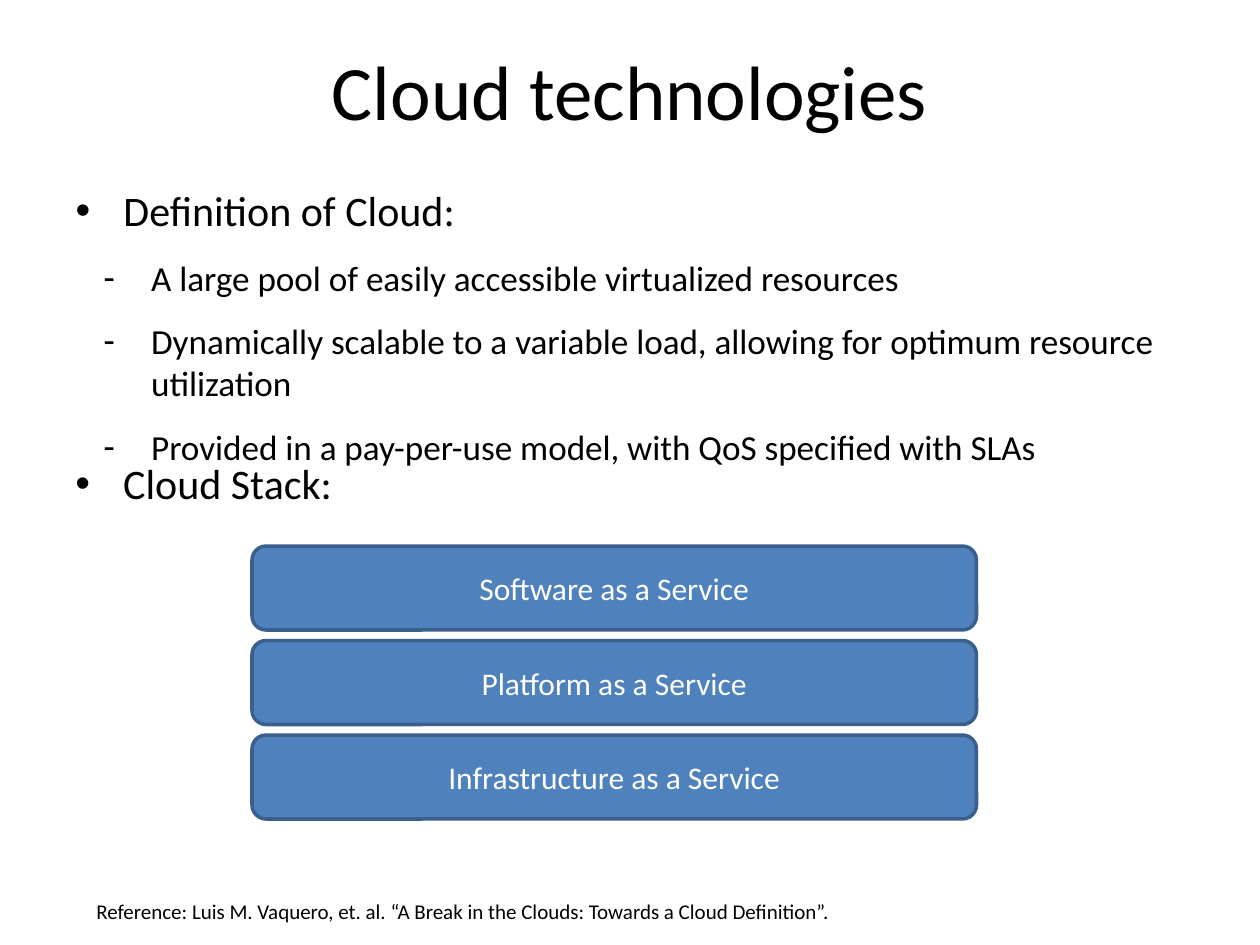
import dataclasses

import pptx
import pptx.dml.color
import pptx.enum.shapes
import pptx.enum.text
import pptx.oxml
import pptx.oxml.ns
import pptx.util

ALIGN = pptx.enum.text.PP_ALIGN
ANCHOR = pptx.enum.text.MSO_ANCHOR
FIT = pptx.enum.text.MSO_AUTO_SIZE
COLUMNS, ROWS = 120, 90


@dataclasses.dataclass(frozen=True)
class Theme:
    font: str = "Calibri"
    ink: str = "000000"
    paper: str = "FFFFFF"
    layer: str = "4F81BD"
    edge: str = "3A5F8C"
    title: float = 44
    topic: float = 24
    detail: float = 20.1
    label: float = 18
    note: float = 12


@dataclasses.dataclass(frozen=True)
class Box:
    """A region measured in columns and rows of the slide grid."""
    left: float
    top: float
    width: float
    height: float


THEME = Theme()
DEFINITION = [
    "A large pool of easily accessible virtualized resources",
    "Dynamically scalable to a variable load, allowing for optimum resource utilization",
    "Provided in a pay-per-use model, with QoS specified with SLAs",
]
STACK = ["Software as a Service", "Platform as a Service", "Infrastructure as a Service"]
REFERENCE = ("Reference: Luis M. Vaquero, et. al. "
             "“A Break in the Clouds: Towards a Cloud Definition”.")


def color(value):
    return pptx.dml.color.RGBColor.from_string(value)


def lengths(box):
    column = pptx.util.Inches(10) / COLUMNS
    row = pptx.util.Inches(7.5) / ROWS
    return [round(size) for size in (box.left * column, box.top * row,
                                     box.width * column, box.height * row)]


def place(shape, box):
    shape.left, shape.top, shape.width, shape.height = lengths(box)


def set_frame(shape, anchor=ANCHOR.TOP, fit=FIT.NONE):
    frame = shape.text_frame
    frame.word_wrap = True
    frame.auto_size = fit
    frame.vertical_anchor = anchor
    return frame


def set_bullet(para, mark, indent, hanging=0.38):
    props = para._p.get_or_add_pPr()
    props.set("marL", str(pptx.util.Inches(indent)))
    props.set("indent", str(-pptx.util.Inches(hanging)))
    space = pptx.oxml.ns.nsdecls("a")
    props.append(pptx.oxml.parse_xml(f'<a:buFont {space} typeface="Arial"/>'))
    props.append(pptx.oxml.parse_xml(f'<a:buChar {space} char="{mark}"/>'))


def write(frame, text, size, ink=THEME.ink, align=ALIGN.LEFT, space=0,
          mark=None, indent=0, level=0):
    """Fill the frame's empty first paragraph, or add a new one."""
    para = frame.paragraphs[-1]
    if para.runs:
        para = frame.add_paragraph()
    para.alignment = align
    para.level = level
    para.space_before = para.space_after = pptx.util.Pt(space)
    if mark:
        set_bullet(para, mark, indent)
    span = para.add_run()
    span.text = text
    span.font.name = THEME.font
    span.font.size = pptx.util.Pt(size)
    span.font.color.rgb = color(ink)


def write_topic(frame, text):
    write(frame, text, THEME.topic, space=6, mark="•", indent=0.38)


def add_title(page, box):
    place(page.shapes.title, box)
    frame = set_frame(page.shapes.title, anchor=ANCHOR.MIDDLE)
    write(frame, "Cloud technologies", THEME.title, align=ALIGN.CENTER)


def add_definition(page, box):
    body = page.placeholders[1]
    place(body, box)
    frame = set_frame(body)
    write_topic(frame, "Definition of Cloud:")
    for detail in DEFINITION:
        write(frame, detail, THEME.detail, space=6, mark="-", indent=0.6, level=1)


def add_stack_heading(page, box):
    heading = page.shapes.add_textbox(*lengths(box))
    write_topic(set_frame(heading), "Cloud Stack:")


def add_stack(page, box, gap=1):
    height = (box.height - gap * (len(STACK) - 1)) / len(STACK)
    for index, label in enumerate(STACK):
        slot = Box(box.left, box.top + index * (height + gap), box.width, height)
        layer = page.shapes.add_shape(
            pptx.enum.shapes.MSO_SHAPE.ROUNDED_RECTANGLE, *lengths(slot))
        layer.shadow.inherit = False
        layer.fill.solid()
        layer.fill.fore_color.rgb = color(THEME.layer)
        layer.line.color.rgb = color(THEME.edge)
        layer.line.width = pptx.util.Pt(2)
        frame = set_frame(layer, anchor=ANCHOR.MIDDLE)
        write(frame, label, THEME.label, ink=THEME.paper, align=ALIGN.CENTER)


def add_reference(page, box):
    note = page.shapes.add_textbox(*lengths(box))
    write(set_frame(note, fit=FIT.SHAPE_TO_FIT_TEXT), REFERENCE, THEME.note)


def main():
    deck = pptx.Presentation()
    deck.slide_width = pptx.util.Inches(10)
    deck.slide_height = pptx.util.Inches(7.5)
    page = deck.slides.add_slide(deck.slide_layouts[1])
    page.background.fill.solid()
    page.background.fill.fore_color.rgb = color(THEME.paper)

    # Heading and definition
    add_title(page, Box(6, 1, 108, 15))
    add_definition(page, Box(6, 17, 108, 25))

    # Service layers
    add_stack_heading(page, Box(6, 43, 108, 7))
    add_stack(page, Box(24, 52, 69, 26))

    # Source note
    add_reference(page, Box(8, 85, 106, 3.6))
    deck.save("out.pptx")


if __name__ == "__main__":
    main()
